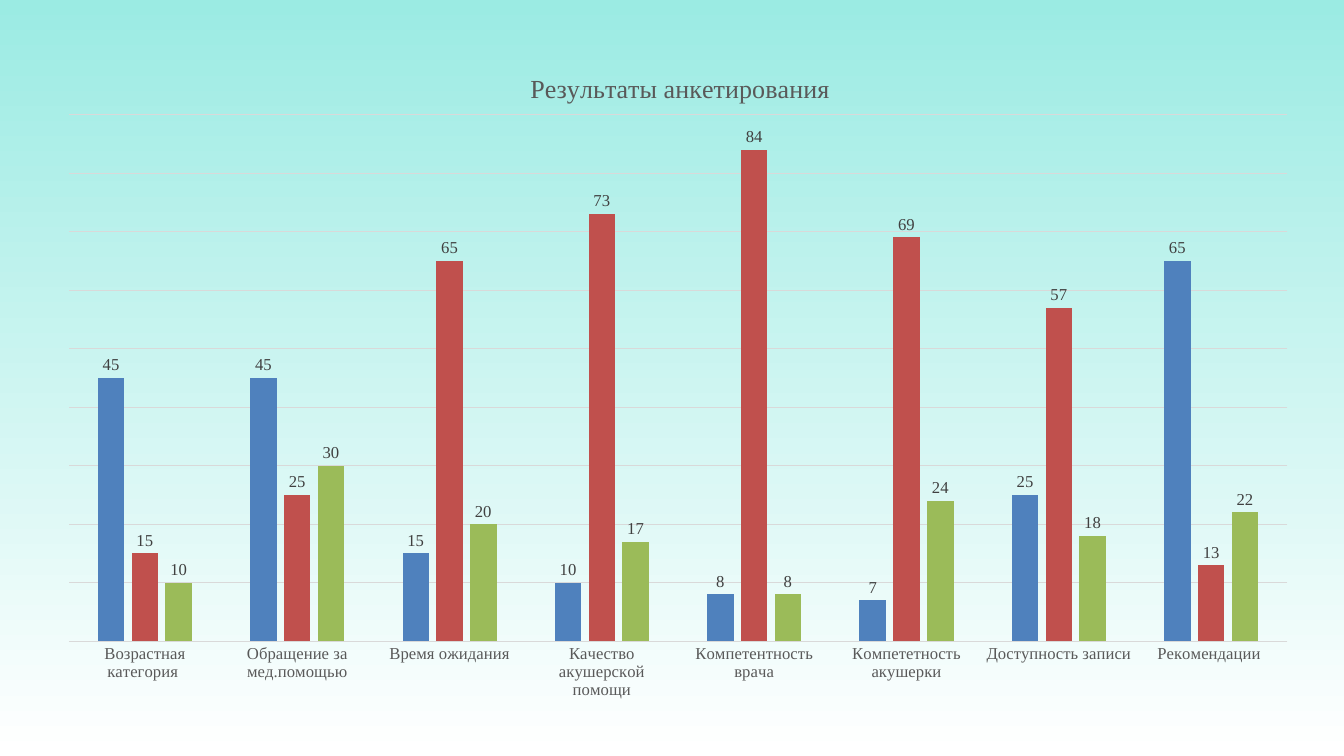
from lxml.etree import SubElement
from pptx import Presentation
from pptx.chart.data import CategoryChartData
from pptx.dml.color import RGBColor
from pptx.enum.chart import XL_CHART_TYPE, XL_LABEL_POSITION, XL_TICK_LABEL_POSITION, XL_TICK_MARK
from pptx.oxml.ns import qn
from pptx.util import Inches, Pt

HUES = {
    "white": "FFFFFF", "mint": "9BEBE3", "grid": "D9D9D9",
    "text": "595959", "label": "404040",
    "blue": "4F81BD", "red": "C0504D", "green": "9BBB59",
}
SERIF = "Times New Roman"
TOPICS = [
    "Возрастная категория ", "Обращение за мед.помощью", "Время ожидания",
    "Качество акушерской помощи", "Компетентность врача",
    "Компететность акушерки", "Доступность записи", "Рекомендации ",
]
SCORES = [
    ("Series 1", "blue", (45, 45, 15, 10, 8, 7, 25, 65)),
    ("Series 2", "red", (15, 25, 65, 73, 84, 69, 57, 13)),
    ("Series 3", "green", (10, 30, 20, 17, 8, 24, 18, 22)),
]


def hue(name):
    return RGBColor.from_string(HUES[name])


def style(font, size=11.9, color="text", face=SERIF):
    font.size = Pt(size)
    font.bold = False
    font.name = face
    font.color.rgb = hue(color)


def write(frame, text, **form):
    para = frame.paragraphs[0]
    run = para.add_run()
    run.text = text
    style(run.font, **form)


def rule(line):
    line.color.rgb = hue("grid")
    line.width = Pt(0.75)


def place(node, inner=False, **spots):
    layout = node.get_or_add_layout() if hasattr(node, "get_or_add_layout") else node.find(qn("c:layout"))
    if layout is None:
        layout = SubElement(node, qn("c:layout"))
        node.insert(0, layout)
    for child in list(layout):
        layout.remove(child)
    manual = SubElement(layout, qn("c:manualLayout"))
    if inner:
        SubElement(manual, qn("c:layoutTarget")).set("val", "inner")
    for key in ("x", "y"):
        SubElement(manual, qn(f"c:{key}Mode")).set("val", "edge")
    for key, spot in spots.items():
        SubElement(manual, qn(f"c:{key}")).set("val", str(spot))


def paint(slide):
    fill = slide.background.fill
    fill.gradient()
    fill.gradient_angle = 90
    for stop, name in zip(fill.gradient_stops, ("white", "mint")):
        stop.color.rgb = hue(name)


def set_axes(chart):
    topic = chart.category_axis
    topic.major_tick_mark = XL_TICK_MARK.NONE
    topic.has_major_gridlines = False
    style(topic.tick_labels.font)
    rule(topic.format.line)
    score = chart.value_axis
    score.minimum_scale, score.maximum_scale, score.major_unit = 0, 90, 10
    score.major_tick_mark = XL_TICK_MARK.NONE
    score.tick_label_position = XL_TICK_LABEL_POSITION.NONE
    score.format.line.fill.background()
    rule(score.major_gridlines.format.line)


def set_bars(plot):
    plot.gap_width, plot.overlap = 219, -27
    plot.vary_by_categories = False
    for row, (_, color, _) in zip(plot.series, SCORES):
        row.format.fill.solid()
        row.format.fill.fore_color.rgb = hue(color)
        row.invert_if_negative = False
        labels = row.data_labels
        labels.show_value = True
        labels.position = XL_LABEL_POSITION.OUTSIDE_END
        style(labels.font, color="label")


def add_survey(slide, left, top, width, height):
    data = CategoryChartData()
    data.categories = TOPICS
    for name, _, marks in SCORES:
        data.add_series(name, marks)
    box = [Inches(n) for n in (left, top, width, height)]
    chart = slide.shapes.add_chart(XL_CHART_TYPE.COLUMN_CLUSTERED, *box, data).chart
    style(chart.font, size=10, face="Calibri")
    chart.has_legend = False
    chart.has_title = True
    title = chart.chart_title
    title.include_in_layout = False
    write(title.text_frame, "Результаты анкетирования", size=18.6)
    root = chart.element
    place(root.find(".//" + qn("c:title")), x=0.38, y=0.04)
    place(root.find(".//" + qn("c:plotArea")), inner=True, x=0.02, y=0.11, w=0.96, h=0.78)
    set_axes(chart)
    set_bars(chart.plots[0])


def main():
    deck = Presentation()
    deck.slide_width, deck.slide_height = Inches(13.33), Inches(7.5)
    slide = deck.slides.add_slide(deck.slide_layouts[6])
    paint(slide)
    add_survey(slide, 0.43, 0.4, 12.59, 6.7)
    deck.save("out.pptx")


if __name__ == "__main__":
    main()
